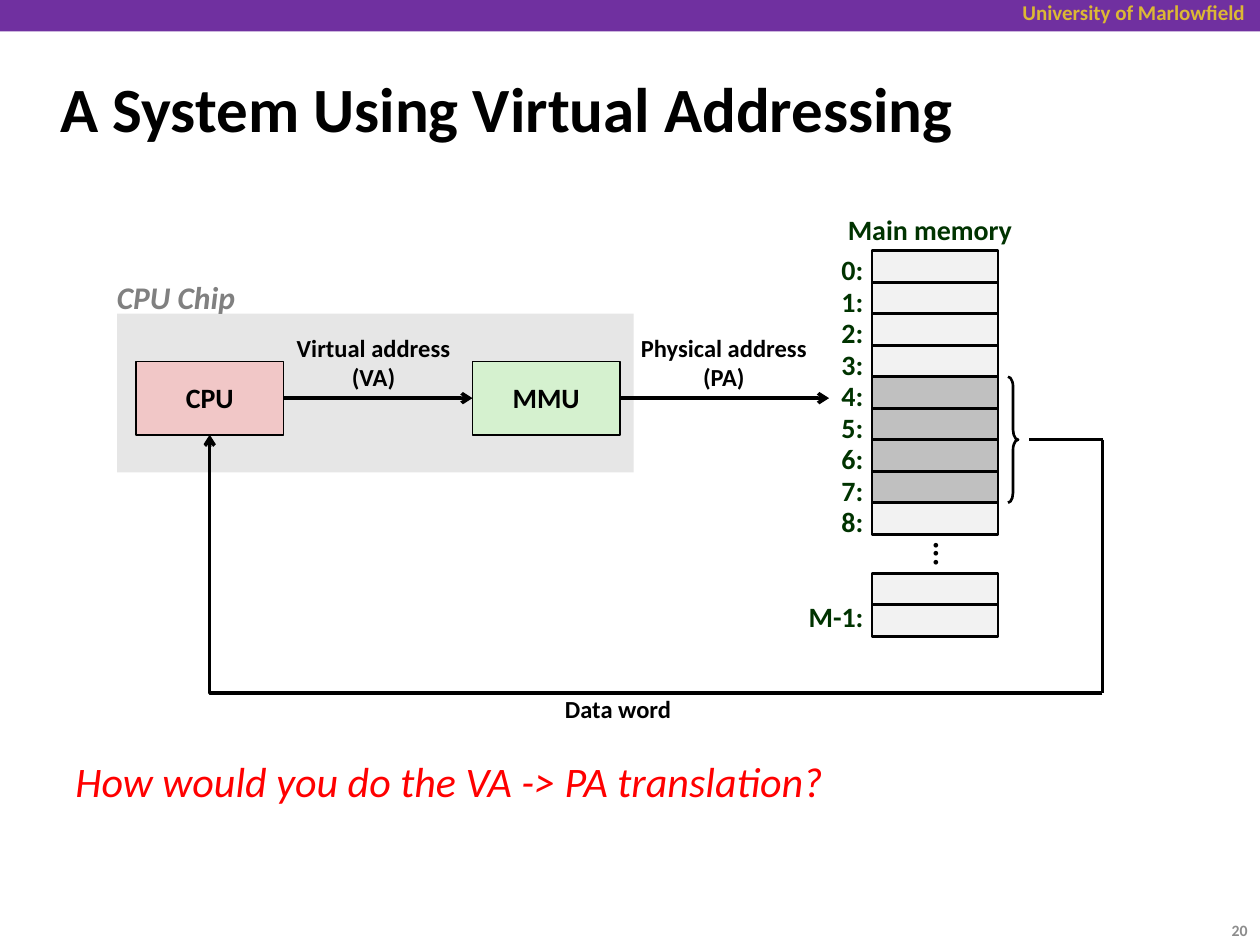
from lxml import etree
from pptx import Presentation
from pptx.dml.color import RGBColor
from pptx.enum import shapes, text
from pptx.oxml import ns
from pptx.util import Inches, Pt

LEFT, CENTER, RIGHT = text.PP_ALIGN.LEFT, text.PP_ALIGN.CENTER, text.PP_ALIGN.RIGHT
TOP, MIDDLE = text.MSO_ANCHOR.TOP, text.MSO_ANCHOR.MIDDLE
RECT = shapes.MSO_SHAPE.RECTANGLE
GREEN = "003300"

prs = Presentation()
prs.slide_width, prs.slide_height = Inches(10), Inches(7.5)
slide = prs.slides.add_slide(prs.slide_layouts[6])


def write(words, box=None, shape=None, size=16, color="000000", bold=True, italic=False,
          align=LEFT, anchor=TOP, wrap=False, spacing=None, before=0):
    shape = shape or slide.shapes.add_textbox(*map(Inches, box))
    frame = shape.text_frame
    frame.text = words
    frame.word_wrap = wrap
    frame.vertical_anchor = anchor
    for line in frame.paragraphs:
        line.alignment = align
        line.line_spacing = spacing
        line.space_before = Pt(before)
        line.font.name, line.font.size = "Calibri", Pt(size)
        line.font.bold, line.font.italic = bold, italic
        line.font.color.rgb = RGBColor.from_string(color)
    return shape


def draw(kind, box, fill=None, outline=None):
    shape = slide.shapes.add_shape(kind, *map(Inches, box))
    shape.shadow.inherit = False
    if fill:
        shape.fill.solid()
        shape.fill.fore_color.rgb = RGBColor.from_string(fill)
    else:
        shape.fill.background()
    if outline:
        shape.line.color.rgb = RGBColor.from_string("000000")
        shape.line.width = Pt(outline)
    else:
        shape.line.fill.background()
    return shape


draw(RECT, (0, 0, 10, 0.25), "7030A0")
write("University of Marlowfield", (7.33, -0.05, 2.65, 0.3), size=12, color="DCB834",
      align=RIGHT, wrap=True)
write("A System Using Virtual Addressing", (0.38, 0.42, 9.53, 0.86), size=36,
      anchor=MIDDLE, wrap=True)

draw(RECT, (0.93, 2.49, 4.1, 1.26), "E6E6E6")
write("CPU Chip", (0.83, 2.16, 1.16, 0.4), size=18, color="808080", italic=True)
cpu = draw(RECT, (1.08, 2.87, 1.17, 0.58), "F1C7C7", 1)
mmu = draw(RECT, (3.75, 2.87, 1.17, 0.58), "D5F1CF", 1)
for unit, name in ((cpu, "CPU"), (mmu, "MMU")):
    write(name, shape=unit, align=CENTER, anchor=MIDDLE, spacing=0.98)

write("Main memory", (6.62, 1.67, 1.52, 0.33), color=GREEN, align=CENTER, spacing=0.88, before=6)
for address in range(9):
    top = 1.99 + 0.25 * address
    draw(RECT, (6.92, top, 1, 0.25), "C0C0C0" if 4 <= address <= 7 else "F2F2F2", 1.5)
    write(f"{address}:", (6.58, top, 0.37, 0.33), color=GREEN, spacing=0.88, before=6)
for top in (4.55, 4.8):
    draw(RECT, (6.92, top, 1, 0.25), "F2F2F2", 1.5)
write("M-1:", (6.32, 4.74, 0.64, 0.33), color=GREEN, spacing=0.88, before=6)

gap = write("...", (7, 4.2, 1, 0.25), size=18, align=CENTER, anchor=MIDDLE, spacing=0.98)
gap.text_frame._txBody.bodyPr.set("vert", "eaVert")
gap.text_frame.paragraphs[0]._p.get_or_add_pPr().set("rtl", "1")

word_brace = draw(shapes.MSO_SHAPE.RIGHT_BRACE, (8, 2.99, 0.08, 1), outline=1.5)
word_brace.adjustments[0] = 1
word_brace.adjustments[1] = 0.5

for words, box in (
    ("Virtual address\n(VA)", (2.25, 2.6, 1.43, 0.57)),
    ("Physical address\n(PA)", (4.98, 2.6, 1.53, 0.57)),
    ("Data word", (4.38, 5.47, 1.05, 0.33)),
):
    write(words, box, size=14, align=CENTER, anchor=MIDDLE, spacing=0.98)

STRAIGHT, ELBOW = shapes.MSO_CONNECTOR.STRAIGHT, shapes.MSO_CONNECTOR.ELBOW
for kind, ends, source, target, arrow in (
    (STRAIGHT, (2.25, 3.16, 3.75, 3.16), (cpu, 3), (mmu, 1), True),
    (STRAIGHT, (4.92, 3.16, 6.58, 3.16), (mmu, 3), None, True),
    (STRAIGHT, (8.17, 3.49, 8.75, 3.49), None, None, False),
    (STRAIGHT, (8.75, 3.49, 8.75, 5.5), None, None, False),
    (ELBOW, (8.75, 5.5, 1.67, 3.45), None, (cpu, 2), True),
):
    link = slide.shapes.add_connector(kind, *map(Inches, ends))
    link.line.color.rgb = RGBColor.from_string("000000")
    link.line.width = Pt(2)
    if source:
        link.begin_connect(*source)
    if target:
        link.end_connect(*target)
    properties = link._element.spPr
    if kind == ELBOW:
        properties.find(ns.qn("a:prstGeom")).set("prst", "bentConnector2")
    if arrow:
        etree.SubElement(link.line._get_or_add_ln(), ns.qn("a:tailEnd"), type="arrow")
    etree.SubElement(properties, ns.qn("a:effectLst"))

write("How would you do the VA -> PA translation?", (0.5, 5.95, 9.09, 1.38), size=24,
      color="FF0000", bold=False, italic=True, wrap=True, before=5)
write("20", (9.33, 7.18, 0.67, 0.4), size=9, color="8C8C8C", align=RIGHT,
      anchor=MIDDLE, wrap=True)

prs.save("out.pptx")
